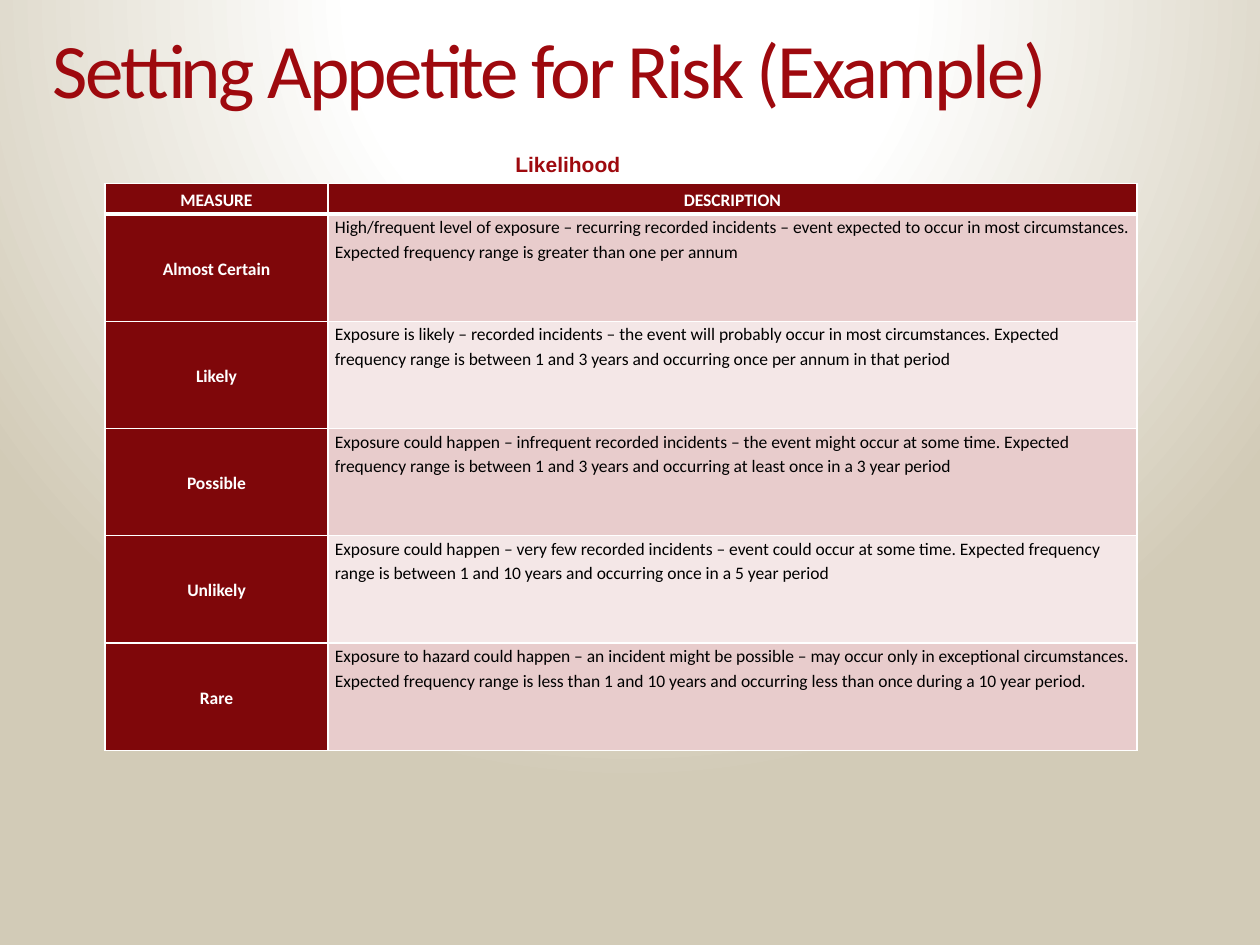
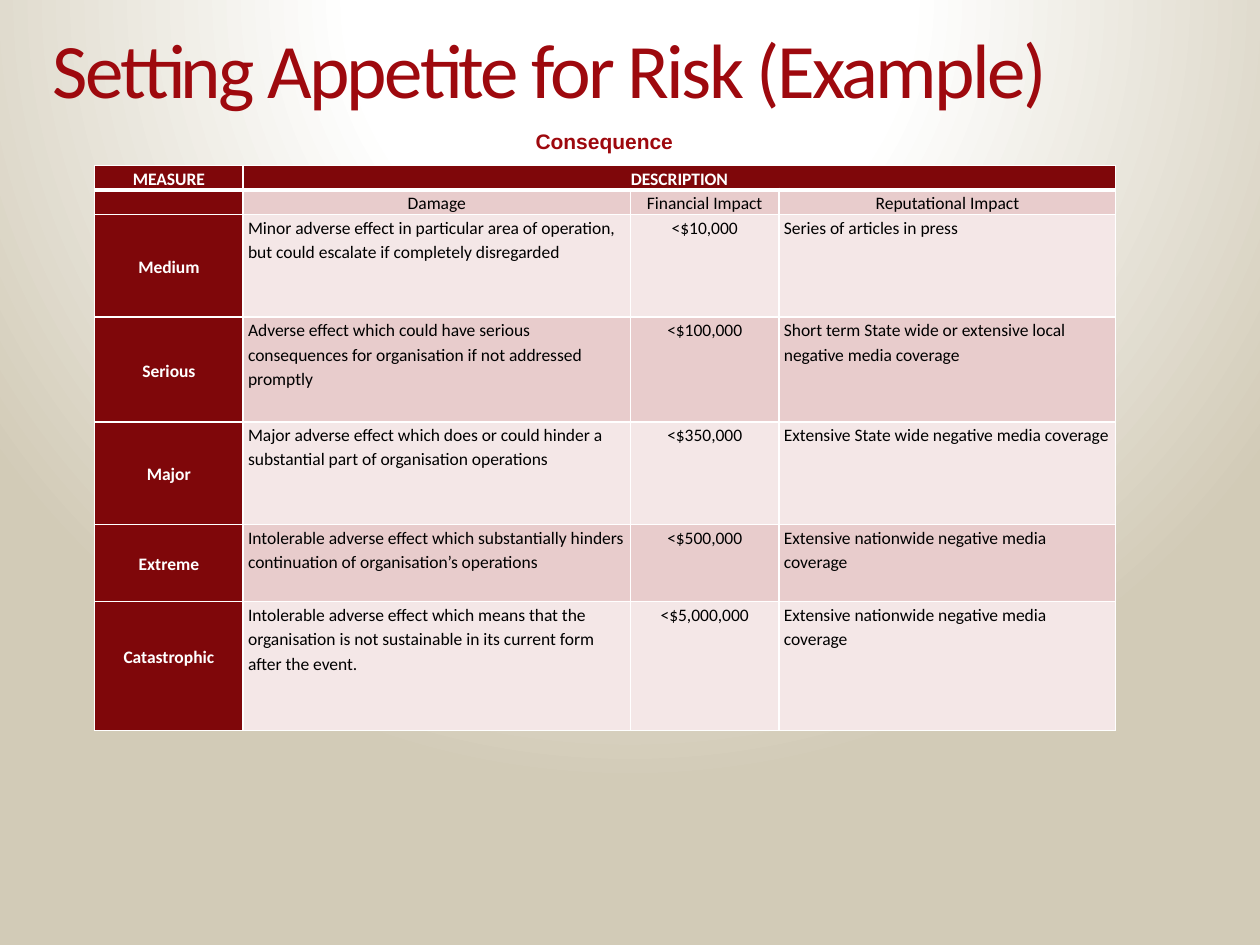
import lxml.etree
import pptx
import pptx.dml.color
import pptx.enum.text
import pptx.oxml
import pptx.oxml.ns
import pptx.util

Pt = pptx.util.Pt
ALIGN = pptx.enum.text.PP_ALIGN
ANCHOR = pptx.enum.text.MSO_ANCHOR

RED, DARK_RED = "9E090E", "7F070A"
WHITE, BLACK = "FFFFFF", "000000"
BANDS = ("E8CCCC", "F4E7E7")
GRADIENT_STOPS = ((0, WHITE), (35, WHITE), (100, "D2CBB7"))

TITLE = "Setting Appetite for Risk (Example)"
TITLE_FONT = {"name": "Calibri", "size": Pt(44), "bold": False}
LABEL_FONT = {"name": "Arial", "size": Pt(12), "bold": True}
HEADING_FONT = {"name": "Calibri", "size": Pt(10), "bold": True}
BODY_FONT = {"name": "Calibri", "size": Pt(10), "bold": False}

LIKELIHOOD_ROWS = [
    ("MEASURE", "DESCRIPTION"),
    ("Almost Certain",
     "High/frequent level of exposure – recurring recorded incidents – event expected to occur "
     "in most circumstances. Expected frequency range is greater than one per annum"),
    ("Likely",
     "Exposure is likely – recorded incidents – the event will probably occur in most "
     "circumstances. Expected frequency range is between 1 and 3 years and occurring once "
     "per annum in that period"),
    ("Possible",
     "Exposure could happen – infrequent recorded incidents – the event might occur at some "
     "time. Expected frequency range is between 1 and 3 years and occurring at least once in "
     "a 3 year period"),
    ("Unlikely",
     "Exposure could happen – very few recorded incidents – event could occur at some time. "
     "Expected frequency range is between 1 and 10 years and occurring once in a 5 year period"),
    ("Rare",
     "Exposure to hazard could happen – an incident might be possible – may occur only in "
     "exceptional circumstances. Expected frequency range is less than 1 and 10 years and "
     "occurring less than once during a 10 year period."),
]

CONSEQUENCE_ROWS = [
    ("MEASURE", "DESCRIPTION", "", ""),
    ("", "Damage", "Financial Impact", "Reputational Impact"),
    ("Medium",
     "Minor adverse effect in particular area of operation, but could escalate if completely "
     "disregarded",
     "<$10,000", "Series of articles in press"),
    ("Serious",
     "Adverse effect which could have serious consequences for organisation if not addressed "
     "promptly",
     "<$100,000", "Short term State wide or extensive local negative media coverage"),
    ("Major",
     "Major adverse effect which does or could hinder a substantial part of organisation "
     "operations",
     "<$350,000", "Extensive State wide negative media coverage"),
    ("Extreme",
     "Intolerable adverse effect which substantially hinders continuation of organisation’s "
     "operations",
     "<$500,000", "Extensive nationwide negative media coverage"),
    ("Catastrophic",
     "Intolerable adverse effect which means that the organisation is not sustainable in its "
     "current form after the event.",
     "<$5,000,000", "Extensive nationwide negative media coverage"),
]


def color(value):
    return pptx.dml.color.RGBColor.from_string(value)


def apply(target, values):
    for name, value in values.items():
        setattr(target, name, value)


def set_background(master):
    """Give every slide the glow that fades out from above the top edge."""
    master.background.fill.solid()
    properties = master.element.cSld.find(".//" + pptx.oxml.ns.qn("p:bgPr"))
    stops = "".join(
        f'<a:gs pos="{position * 1000}"><a:srgbClr val="{value}"/></a:gs>'
        for position, value in GRADIENT_STOPS)
    gradient = pptx.oxml.parse_xml(
        f'<a:gradFill {pptx.oxml.ns.nsdecls("a")} rotWithShape="1"><a:gsLst>{stops}</a:gsLst>'
        '<a:path path="circle"><a:fillToRect l="50000" t="-80000" r="50000" b="180000"/>'
        '</a:path></a:gradFill>')
    properties.replace(properties[0], gradient)


def add_text(slide, box, text, font, margins=(0, 0, 0, 0), wrap=True):
    shape = slide.shapes.add_textbox(*map(Pt, box))
    frame = shape.text_frame
    frame.word_wrap = wrap
    sides = ("margin_left", "margin_top", "margin_right", "margin_bottom")
    apply(frame, dict(zip(sides, map(Pt, margins))))
    paragraph = frame.paragraphs[0]
    run = paragraph.add_run()
    run.text = text
    apply(run.font, font)
    run.font.color.rgb = color(RED)
    return paragraph, run


def add_title(slide):
    paragraph, run = add_text(slide, (30, 18, 660, 48), TITLE, TITLE_FONT)
    paragraph.line_spacing = 0.9
    run.font._element.set("spc", "-150")


def add_label(slide, left, top, text):
    add_text(slide, (left, top, 176, 50), text, LABEL_FONT, (42.5, 4.5, 7, 10), wrap=False)


def set_borders(cell, widths):
    """Draw white cell borders; widths holds points by side (L, R, T, B)."""
    properties = cell._tc.get_or_add_tcPr()
    for side, width in widths.items():
        line = lxml.etree.SubElement(
            properties, pptx.oxml.ns.qn(f"a:ln{side}"), w=str(Pt(width)))
        fill = lxml.etree.SubElement(line, pptx.oxml.ns.qn("a:solidFill"))
        lxml.etree.SubElement(fill, pptx.oxml.ns.qn("a:srgbClr"), val=WHITE)


def fill_cell(cell, text, fill, heading, centred, middle, margin):
    cell.fill.solid()
    cell.fill.fore_color.rgb = color(fill)
    apply(cell, {
        "margin_left": Pt(margin), "margin_right": Pt(margin),
        "margin_top": 0, "margin_bottom": 0,
        "vertical_anchor": ANCHOR.MIDDLE if middle else ANCHOR.TOP,
    })
    paragraph = cell.text_frame.paragraphs[0]
    paragraph.alignment = ALIGN.CENTER if centred else ALIGN.LEFT
    paragraph.line_spacing = 1.15
    if not text:
        lxml.etree.SubElement(paragraph._p, pptx.oxml.ns.qn("a:endParaRPr"), sz="1000")
        return
    run = paragraph.add_run()
    run.text = text
    apply(run.font, HEADING_FONT if heading else BODY_FONT)
    run.font.color.rgb = color(WHITE if heading else BLACK)


def add_measure_table(slide, left, top, widths, heights, rows, margin,
                      centred_columns=(0,), header_rows=1):
    """Add a table with a dark header row and first column, and banded body rows."""
    table = slide.shapes.add_table(
        len(rows), len(widths), Pt(left), Pt(top), Pt(sum(widths)), Pt(sum(heights))).table
    for column, width in zip(table.columns, widths):
        column.width = Pt(width)
    for row, height in zip(table.rows, heights):
        row.height = Pt(height)
    for row_index, values in enumerate(rows):
        header = row_index < header_rows
        for column_index, text in enumerate(values):
            cell = table.cell(row_index, column_index)
            heading = row_index == 0 or column_index == 0
            set_borders(cell, {"L": 1, "R": 1,
                               "T": 3 if row_index == 1 else 1,
                               "B": 3 if row_index == 0 else 1})
            fill_cell(cell, text, DARK_RED if heading else BANDS[(row_index - 1) % 2],
                      heading, header or column_index in centred_columns,
                      header or column_index == 0, margin)
    return table


def build_likelihood(slide):
    add_title(slide)
    add_measure_table(slide, 60, 105, (127.4, 462.2), [17.3] + [61.3] * 5,
                      LIKELIHOOD_ROWS, margin=4)
    add_label(slide, 252, 82, "Likelihood")


def build_consequence(slide):
    add_title(slide)
    table = add_measure_table(slide, 54, 94.5, (85, 221.2, 85, 192.4),
                              (14, 14, 58.8, 59.8, 58.8, 44, 73.6),
                              CONSEQUENCE_ROWS, margin=2.8,
                              centred_columns=(0, 2), header_rows=2)
    table.cell(0, 1).merge(table.cell(0, 3))
    table.cell(6, 0).margin_bottom = Pt(11.5)
    add_label(slide, 263.5, 69, "Consequence")


def main():
    presentation = pptx.Presentation()
    presentation.slide_width, presentation.slide_height = Pt(720), Pt(540)
    set_background(presentation.slide_master)
    blank = presentation.slide_layouts[6]
    for build in (build_likelihood, build_consequence):
        build(presentation.slides.add_slide(blank))
    presentation.save("out.pptx")


if __name__ == "__main__":
    main()
